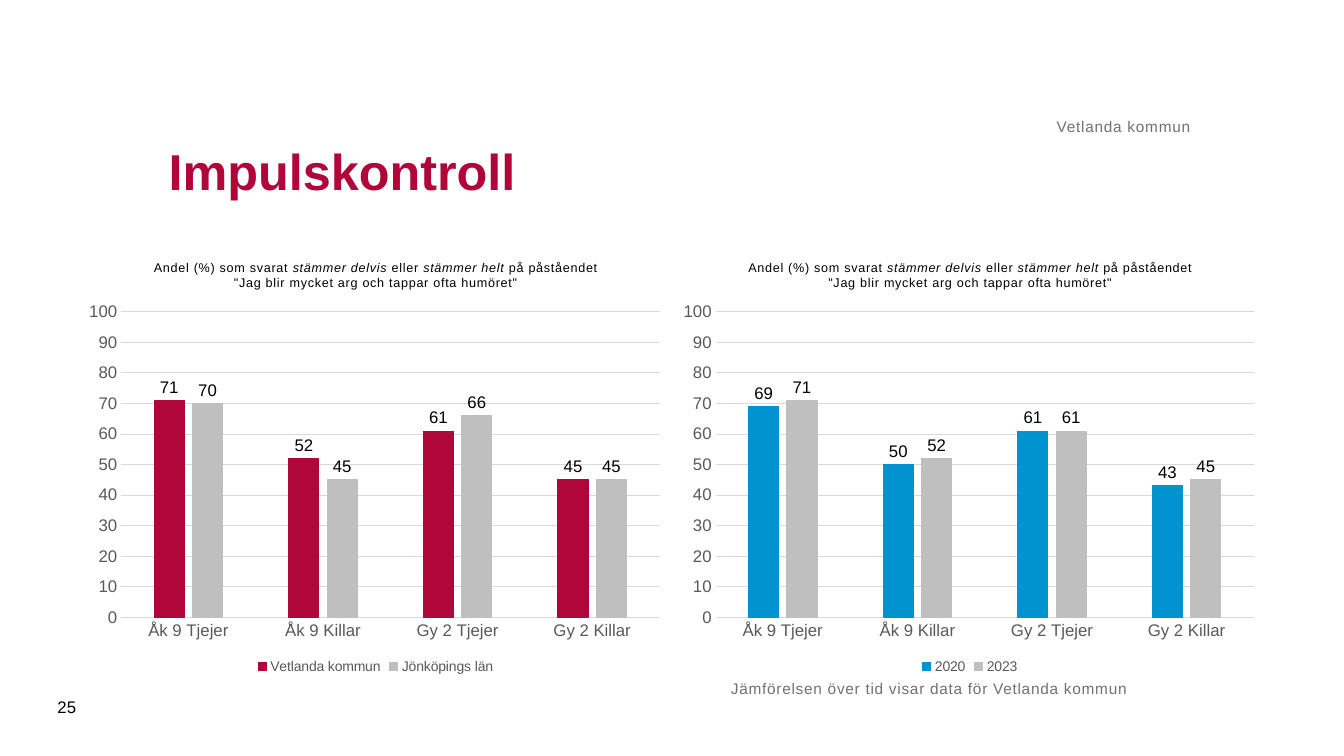
from typing import NamedTuple

from lxml.etree import SubElement
from pptx import Presentation
from pptx.chart.data import CategoryChartData
from pptx.dml.color import RGBColor
from pptx.enum.chart import (XL_CHART_TYPE, XL_LABEL_POSITION,
                             XL_LEGEND_POSITION, XL_TICK_MARK)
from pptx.enum.text import MSO_ANCHOR, PP_ALIGN
from pptx.oxml.ns import qn
from pptx.util import Cm, Pt

FACE = "Arial"
RED, BLUE, SILVER = "B1063A", "0093D0", "BFBFBF"
BLACK, DARK, GREY, PALE = "000000", "595959", "717171", "D9D9D9"
FORMAT = "#,##0;#,##0"
GROUPS = ["Åk 9 Tjejer", "Åk 9 Killar", "Gy 2 Tjejer", "Gy 2 Killar"]
# Heading lines as (text, italic) pieces
HEADING = [
    [("Andel (%) som svarat ", False), ("stämmer delvis", True),
     (" eller ", False), ("stämmer helt", True), (" på påståendet", False)],
    [('"Jag blir mycket arg och tappar ofta humöret"', False)],
]
# Plot area as shares of the chart
PLOT = {"x": 0.07, "y": 0.16, "w": 0.91, "h": 0.7}


class Series(NamedTuple):
    name: str
    values: tuple
    color: str


class Panel(NamedTuple):
    left: float
    series: list


PANELS = [
    Panel(2.01, [Series("Vetlanda kommun", (71, 52, 61, 45), RED),
                 Series("Jönköpings län", (70, 45, 66, 45), SILVER)]),
    Panel(16.99, [Series("2020", (69, 50, 61, 43), BLUE),
                  Series("2023", (71, 52, 61, 45), SILVER)]),
]


def color(code: str) -> RGBColor:
    return RGBColor.from_string(code)


def style(font, size: float, code: str, bold=False, italic=False) -> None:
    font.name, font.size = FACE, Pt(size)
    font.bold, font.italic = bold, italic
    font.color.rgb = color(code)


def space(run) -> None:
    """Widen the letter spacing by half a point."""
    run._r.get_or_add_rPr().set("spc", "50")


def stroke(line, code: str) -> None:
    line.color.rgb = color(code)
    line.width = Pt(0.75)


def write(slide, text: str, left: float, top: float, width: float,
          height: float, *, size: float, code: str, bold=False, wide=False,
          align=PP_ALIGN.LEFT, anchor=MSO_ANCHOR.MIDDLE, inset=True) -> None:
    box = slide.shapes.add_textbox(Cm(left), Cm(top), Cm(width), Cm(height))
    frame = box.text_frame
    frame.word_wrap = True
    frame.vertical_anchor = anchor
    if not inset:
        frame.margin_left = frame.margin_right = 0
        frame.margin_top = frame.margin_bottom = 0
    para = frame.paragraphs[0]
    para.alignment = align
    run = para.add_run()
    run.text = text
    style(run.font, size, code, bold)
    if wide:
        space(run)


def head(chart) -> None:
    frame = chart.chart_title.text_frame
    for i, line in enumerate(HEADING):
        para = frame.add_paragraph() if i else frame.paragraphs[0]
        para.alignment = PP_ALIGN.CENTER
        style(para.font, 9, BLACK)
        for text, italic in line:
            run = para.add_run()
            run.text = text
            style(run.font, 9, BLACK, italic=italic)
            space(run)
    chart.chart_title.include_in_layout = False


def place(chart) -> None:
    """Fix the inner plot area inside the chart."""
    area = chart._chartSpace.chart.plotArea
    for old in area.findall(qn("c:layout")):
        area.remove(old)
    layout = SubElement(area, qn("c:layout"))
    area.insert(0, layout)
    manual = SubElement(layout, qn("c:manualLayout"))
    parts = {"layoutTarget": "inner", "xMode": "edge", "yMode": "edge", **PLOT}
    for name, value in parts.items():
        SubElement(manual, qn(f"c:{name}")).set("val", str(value))


def draw(slide, panel: Panel) -> None:
    data = CategoryChartData(number_format=FORMAT)
    data.categories = GROUPS
    for item in panel.series:
        data.add_series(item.name, item.values)
    chart = slide.shapes.add_chart(
        XL_CHART_TYPE.COLUMN_CLUSTERED, Cm(panel.left), Cm(6.1),
        Cm(14.91), Cm(11), data).chart
    style(chart.font, 10, BLACK)
    head(chart)
    place(chart)

    # Legend
    chart.has_legend = True
    chart.legend.position = XL_LEGEND_POSITION.BOTTOM
    chart.legend.include_in_layout = False
    style(chart.legend.font, 10, DARK)

    # Axes
    base, scale = chart.category_axis, chart.value_axis
    for axis in (base, scale):
        axis.major_tick_mark = axis.minor_tick_mark = XL_TICK_MARK.NONE
        style(axis.tick_labels.font, 12, DARK)
    stroke(base.format.line, PALE)
    scale.format.line.fill.background()
    scale.minimum_scale, scale.maximum_scale = 0, 100
    scale.major_unit = 10
    scale.tick_labels.number_format = FORMAT
    scale.tick_labels.number_format_is_linked = False
    stroke(scale.major_gridlines.format.line, PALE)

    # Columns
    plot = chart.plots[0]
    plot.gap_width, plot.overlap = 219, -27
    plot.vary_by_categories = False
    for bars, item in zip(plot.series, panel.series):
        bars.format.fill.solid()
        bars.format.fill.fore_color.rgb = color(item.color)
        stroke(bars.format.line, item.color)
        labels = bars.data_labels
        labels.show_value = True
        labels.position = XL_LABEL_POSITION.OUTSIDE_END
        labels.number_format = FORMAT
        labels.number_format_is_linked = False
        style(labels.font, 12, BLACK)


def main() -> None:
    deck = Presentation()
    deck.slide_width, deck.slide_height = Cm(33.87), Cm(19.05)
    slide = deck.slides.add_slide(deck.slide_layouts[6])

    # Charts
    for panel in PANELS:
        draw(slide, panel)

    # Title, place, page number and note
    write(slide, "Impulskontroll", 4, 2.5, 26, 3.6,
          size=36, code=RED, bold=True)
    write(slide, "Vetlanda kommun", 4, 1.57, 26, 1.85, size=11, code=GREY,
          wide=True, align=PP_ALIGN.RIGHT, anchor=MSO_ANCHOR.BOTTOM,
          inset=False)
    write(slide, "25", 1.2, 17.3, 1.45, 1.02, size=12, code=BLACK)
    write(slide, "Jämförelsen över tid visar data för Vetlanda kommun",
          18.42, 17.12, 13.49, 1.9, size=11, code=GREY, wide=True,
          anchor=MSO_ANCHOR.TOP, inset=False)

    deck.save("out.pptx")


if __name__ == "__main__":
    main()
